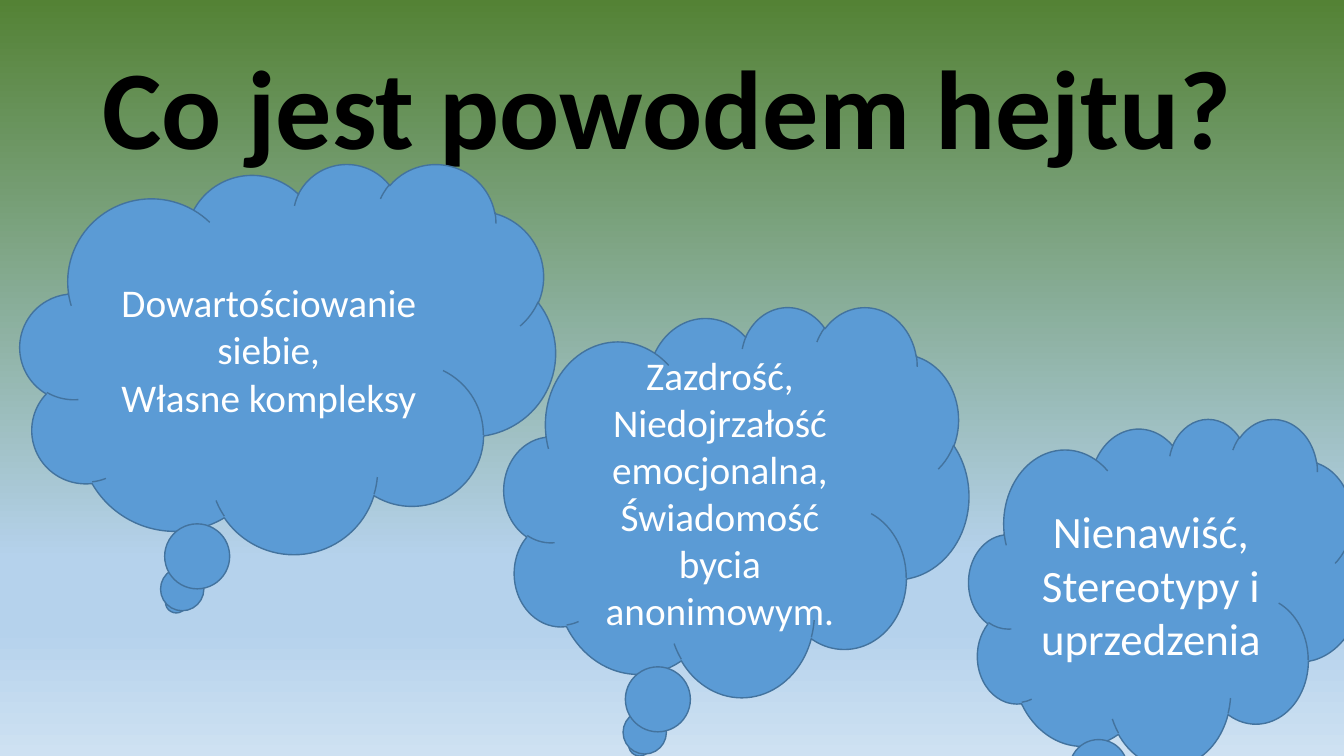
from lxml.etree import SubElement
from pptx import Presentation
from pptx.dml.color import RGBColor as Rgb
from pptx.enum.shapes import MSO_SHAPE as Shape
from pptx.enum.text import MSO_ANCHOR as Anchor, PP_ALIGN as Align
from pptx.oxml.ns import qn
from pptx.util import Inches, Pt

WIDE, HIGH = Inches(13.33), Inches(7.5)
HUES = {"moss": "548235", "sky": "B5D2EC", "haze": "CEE1F2",
        "cloud": "5B9BD5", "edge": "43739E", "ink": "000000", "white": "FFFFFF"}
STOPS = [(0, "moss"), (74, "sky"), (83, "sky"), (100, "haze")]
TITLE = (6.9, 5.33, 86.27, 19.33)
CLOUDS = [
    ((1.5, 21.6, 39.83, 51.6), 28, ["Dowartościowanie siebie,", "Własne kompleksy"]),
    ((72.09, 55.33, 29.18, 46), 32, ["Nienawiść,", "Stereotypy i uprzedzenia"]),
    ((37.51, 40.53, 34.58, 51.6), 28,
     ["Zazdrość,", "Niedojrzałość emocjonalna,", "Świadomość bycia anonimowym."]),
]


def hue(name):
    return Rgb.from_string(HUES[name])


def place(box):
    return [int(share * side / 100) for share, side in zip(box, (WIDE, HIGH) * 2)]


def style(item, form):
    for key, value in form.items():
        setattr(item, key, value)


def write(frame, lines, size, tint, bold=False, **form):
    style(frame, {"word_wrap": True, "vertical_anchor": Anchor.MIDDLE})
    for spot, line in enumerate(lines):
        para = frame.add_paragraph() if spot else frame.paragraphs[0]
        style(para, form)
        run = para.add_run()
        run.text = line
        style(run.font, {"name": "Calibri", "size": Pt(size), "bold": bold})
        run.font.color.rgb = hue(tint)


def add_sky(slide):
    fill = slide.background.fill
    fill.gradient()
    fill.gradient_angle = 270
    stops = next(slide.element.iter(qn("a:gsLst")))
    for stop in list(stops):
        stops.remove(stop)
    for share, name in STOPS:
        stop = SubElement(stops, qn("a:gs"), pos=str(share * 1000))
        SubElement(stop, qn("a:srgbClr"), val=HUES[name])


def add_title(slide, box):
    frame = slide.shapes.add_textbox(*place(box)).text_frame
    write(frame, ["Co jest powodem hejtu?"], 80, "ink", True,
          alignment=Align.LEFT, line_spacing=0.9)


def add_cloud(slide, box, size, lines):
    cloud = slide.shapes.add_shape(Shape.CLOUD_CALLOUT, *place(box))
    cloud.shadow.inherit = False
    cloud.fill.solid()
    cloud.fill.fore_color.rgb = hue("cloud")
    cloud.line.color.rgb = hue("edge")
    cloud.line.width = Pt(1)
    write(cloud.text_frame, lines, size, "white", alignment=Align.CENTER)


def main():
    deck = Presentation()
    style(deck, {"slide_width": WIDE, "slide_height": HIGH})
    slide = deck.slides.add_slide(deck.slide_layouts[6])
    add_sky(slide)
    add_title(slide, TITLE)
    for box, size, lines in CLOUDS:
        add_cloud(slide, box, size, lines)
    deck.save("out.pptx")


if __name__ == "__main__":
    main()
